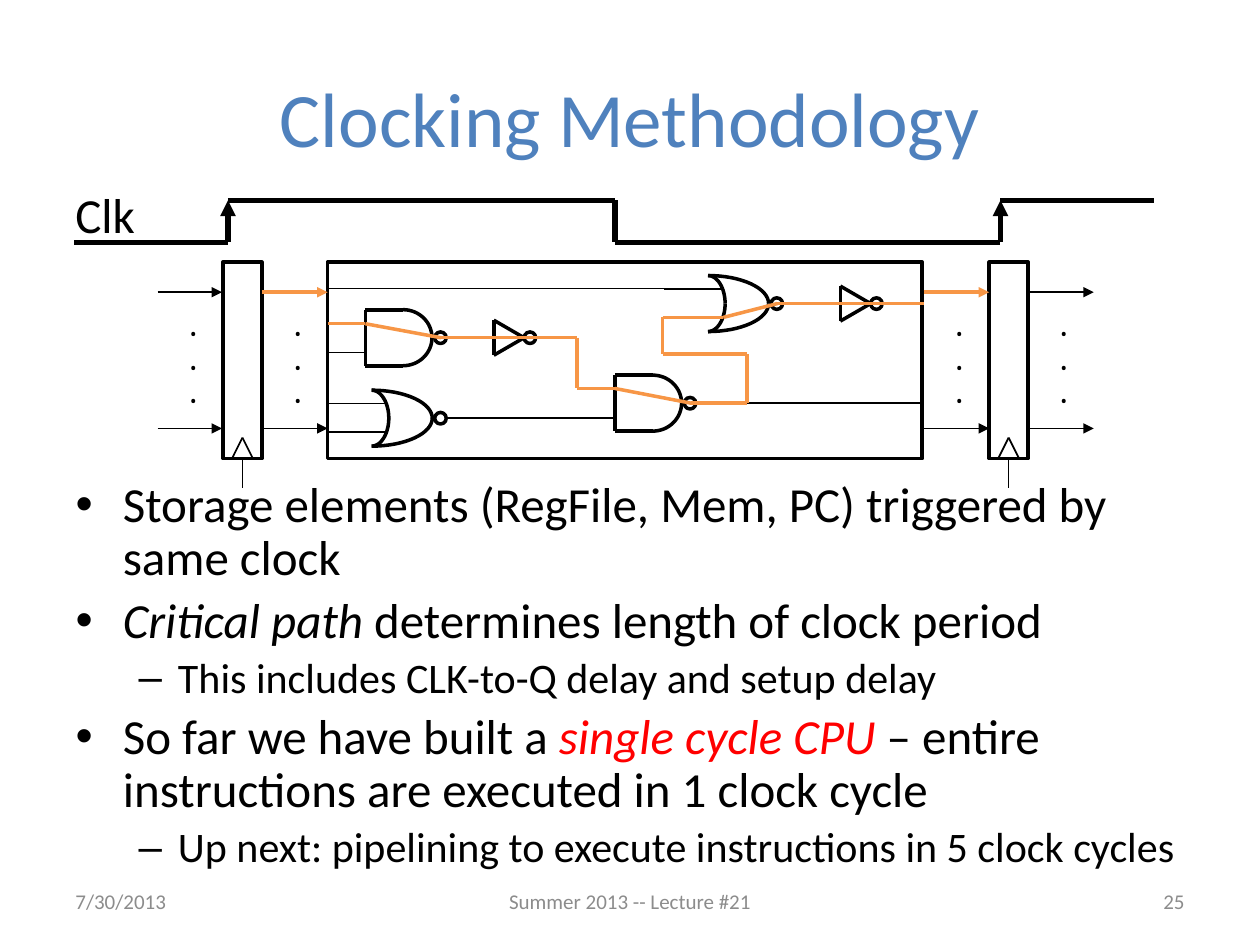
from math import cos, pi, sin
from pptx import Presentation
from pptx.dml.color import RGBColor
from pptx.enum import shapes as kinds, text as te
from pptx.oxml.ns import qn
from pptx.util import Pt

BLACK, ORANGE, BLUE, RED, GRAY = "000000", "F79646", "4F81BD", "FF0000", "8C8C8C"

TITLE = "Clocking Methodology"
BODY = [
    (0, [("Storage elements (RegFile, Mem, PC) triggered by same clock", None)]),
    (0, [("Critical path", BLACK), (" determines length of clock period", None)]),
    (1, [("This includes CLK-to-Q delay and setup delay", None)]),
    (0, [("So far we have built a ", None), ("single cycle CPU", RED),
         (" – entire instructions are executed in 1 clock cycle", None)]),
    (1, [("Up next: pipelining to execute instructions in 5 clock cycles", None)]),
]
FOOT = [
    ("7/30/2013", 36, 168, "LEFT"),
    ("Summer 2013 -- Lecture #21", 246, 228, "CENTER"),
    ("25", 516, 168, "RIGHT"),
]
CLOCK = [(42.3, 138.4), (130.3, 138.4), (130.3, 114.5), (351.4, 114.5),
         (351.4, 138.4), (571.7, 138.4), (571.7, 114.5), (659.5, 114.5)]
RISES = (1, 5)
TOP, TALL, WIDE = 149.8, 112.3, 22.3
REGS = [127.4, 565.2]
LOGIC = (187.2, 339.8)
ROWS = (167, 244.8)
LINKS = [(90, 126.9, BLACK), (149.8, 187.2, ORANGE),
         (527.8, 565.2, ORANGE), (588, 625, BLACK)]
DOTS = [101.5, 161.3, 539.3, 599]
NANDS = [(208.8, 193), (351.4, 230.4)]
NORS = [(212.4, 239), (404.6, 173.5)]
NOTS = [(282.2, 193), (480.2, 173.5)]
WIRES = [((187.2, 164.9), (381.6, 164.9)),
         ((426.2, 230.4), (527, 230.4)),
         ((339.8, 239), (282.2, 239))]
CRIT = [
    [(187.2, 185), (208.8, 185), (252, 193), (329.8, 193),
     (329.8, 222), (351.4, 222), (395, 230.4), (427, 230.4),
     (427, 202.3), (378.7, 202.3), (378.7, 181.4), (413.3, 181.4),
     (444.2, 173.5), (527.8, 173.5)],
]


def rgb(code):
    return RGBColor.from_string(code)


def ink(shape, color, width):
    shape.line.color.rgb = rgb(color)
    shape.line.width = Pt(width)


def wire(a, b, color=BLACK, width=1, arrow=False):
    link = slide.shapes.add_connector(
        kinds.MSO_CONNECTOR.STRAIGHT, Pt(a[0]), Pt(a[1]), Pt(b[0]), Pt(b[1]))
    ink(link, color, width)
    props = link._element.spPr
    if arrow:
        tip = props.find(qn("a:ln")).makeelement(qn("a:tailEnd"), {"type": "triangle"})
        props.find(qn("a:ln")).append(tip)
    props.append(props.makeelement(qn("a:effectLst"), {}))
    return link


def chain(spots, color=BLACK, width=2, arrows=()):
    for i, (a, b) in enumerate(zip(spots, spots[1:])):
        wire(a, b, color, width, i in arrows)


def hollow(shape):
    shape.shadow.inherit = False
    shape.fill.background()
    ink(shape, BLACK, 2)
    return shape


def preset(kind, x, y, w, h):
    return hollow(slide.shapes.add_shape(kind, Pt(x), Pt(y), Pt(w), Pt(h)))


def arcs(x, mid, w):
    for side in (-1, 1):
        turns = [pi / 2 * i / 16 for i in range(17)]
        spots = [(Pt(x + w * sin(t)), Pt(mid + side * 16 * cos(t))) for t in turns]
        path = slide.shapes.build_freeform(*spots[0])
        path.add_line_segments(spots[1:], close=False)
        hollow(path.convert_to_shape())


def bubble(x, mid):
    preset(kinds.MSO_SHAPE.OVAL, x, mid - 3.3, 6.6, 6.6)


def nand(x, mid):
    arcs(x + 21.6, mid, 16.5)
    chain([(x + 21.6, mid - 16), (x, mid - 16), (x, mid + 16), (x + 21.6, mid + 16)])
    bubble(x + 39.6, mid)
    wire((x - 21.6, mid + 8.5), (x, mid + 8.5))
    wire((x + 46.8, mid), (x + 70.5, mid))


def nor(x, mid):
    arcs(x, mid, 34.6)
    arcs(x, mid, 9.8)
    bubble(x + 36, mid)
    for y in (mid - 8.4, mid + 8):
        wire((x - 25.2, y), (x + 8.6, y))
    wire((x + 43.2, mid), (x + 72, mid))


def invert(x, mid):
    chain([(x, mid - 10), (x + 17.3, mid), (x, mid + 10), (x, mid - 10)])
    bubble(x + 17.3, mid)
    wire((x - 21.6, mid), (x, mid))
    wire((x + 23.9, mid), (x + 47.5, mid))


def style(para, size, color, name="Calibri", bold=None):
    font = para.font
    font.size, font.name, font.bold = Pt(size), name, bold
    font.color.rgb = rgb(color)


def label(lines, x, y, w, h, size, color, name="Calibri", bold=None,
          side="LEFT", wrap=False, mid=False):
    frame = slide.shapes.add_textbox(Pt(x), Pt(y), Pt(w), Pt(h)).text_frame
    frame.word_wrap = wrap
    if mid:
        frame.vertical_anchor = te.MSO_ANCHOR.MIDDLE
    frame.text = "\n".join(lines)
    for para in frame.paragraphs:
        para.alignment = te.PP_ALIGN[side]
        style(para, size, color, name, bold)


def place(shape, x, y, w, h):
    shape.left, shape.top, shape.width, shape.height = Pt(x), Pt(y), Pt(w), Pt(h)


deck = Presentation()
deck.slide_width, deck.slide_height = Pt(720), Pt(540)
slide = deck.slides.add_slide(deck.slide_layouts[1])

title, body = slide.placeholders
place(title, 36, 21.6, 648, 90)
title.text_frame.text = TITLE
style(title.text_frame.paragraphs[0], 44, BLUE)

place(body, 36, 270.7, 648, 237.6)
frame = body.text_frame
frame.auto_size = te.MSO_AUTO_SIZE.NONE
for i, (level, parts) in enumerate(BODY):
    para = frame.add_paragraph() if i else frame.paragraphs[0]
    para.level, para.line_spacing = level, 0.9
    style(para, 24 if level else 28, BLACK)
    for words, accent in parts:
        run = para.add_run()
        run.text = words
        if accent:
            run.font.italic = True
            run.font.color.rgb = rgb(accent)

chain(CLOCK, BLACK, 3, RISES)
label(["Clk"], 36, 102.2, 49.7, 41, 28, BLACK)

for x in REGS:
    reg = preset(kinds.MSO_SHAPE.RECTANGLE, x, TOP, WIDE, TALL)
    mid, base = x + WIDE / 2, TOP + TALL
    stem = wire((mid, base), (mid, base + 17))
    stem.begin_connect(reg, 2)
    chain([(mid - 6, base), (mid, base - 12), (mid + 6, base)], BLACK, 1)
left, right = LOGIC
preset(kinds.MSO_SHAPE.RECTANGLE, left, TOP, right, TALL)

for a, b, color in LINKS:
    for y, tint in zip(ROWS, (color, BLACK)):
        wire((a, y), (b, y), tint, 2 if tint == ORANGE else 1, True)
for x in DOTS:
    label("...", x, 172.8, 18, 64.8, 16, BLACK, "Cambria", True)

for draw, spots in ((nand, NANDS), (nor, NORS), (invert, NOTS)):
    for x, mid in spots:
        draw(x, mid)
for a, b in WIRES:
    wire(a, b)
for spots in CRIT:
    chain(spots, ORANGE)

for words, x, w, side in FOOT:
    label([words], x, 500.4, w, 28.8, 12, GRAY, side=side, wrap=True, mid=True)

deck.save("out.pptx")
